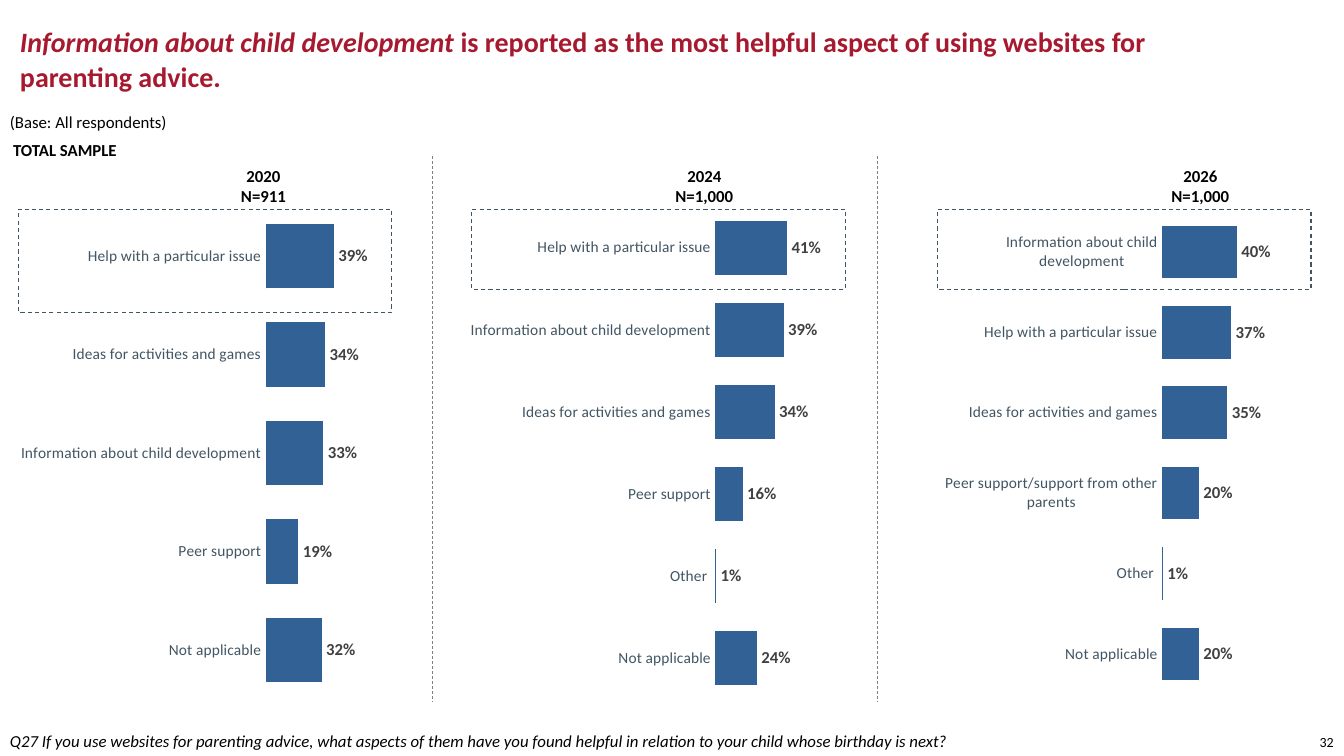
import pptx
import pptx.chart.data
import pptx.dml.color
import pptx.enum.chart
import pptx.enum.dml
import pptx.enum.shapes
import pptx.enum.text
import pptx.oxml
import pptx.util
from pptx.util import Cm

TITLE = [("Information about child development ", True),
         ("is reported as the most helpful aspect of using websites for parenting advice.", False)]
BASE = "(Base: All respondents)"
SAMPLE = "TOTAL SAMPLE"
QUESTION = ("Q27 If you use websites for parenting advice, what aspects of them have you found "
            "helpful in relation to your child whose birthday is next?")
PAGE = "32"

# left edges, header centre, highlight height and plot area (x, y, w, h as shares) per year
PANELS = [
    {"head": ["2020", "N=911"], "center": 6.64, "chart_left": 0.28,
     "box_left": 0.46, "box_height": 2.59, "plot": (0.573, 0.02, 0.4, 0.96),
     "answers": [("Help with a particular issue", 0.39), ("Ideas for activities and games", 0.34),
                 ("Information about child development", 0.33), ("Peer support", 0.19),
                 ("Not applicable", 0.32)]},
    {"head": ["2024", "N=1,000"], "center": 17.75, "chart_left": 11.61,
     "box_left": 11.89, "box_height": 2.01, "plot": (0.573, 0.02, 0.4, 0.96),
     "answers": [("Help with a particular issue", 0.41), ("Information about child development", 0.39),
                 ("Ideas for activities and games", 0.34), ("Peer support", 0.16),
                 ("Other ", 0.01), ("Not applicable", 0.24)]},
    {"head": ["2026", "N=1,000"], "center": 30.25, "chart_left": 23.27,
     "box_left": 23.62, "box_height": 2.01, "plot": (0.537, 0.03, 0.428, 0.94),
     "answers": [("Information about child development", 0.40), ("Help with a particular issue", 0.37),
                 ("Ideas for activities and games", 0.35),
                 ("Peer support/support from other parents", 0.20),
                 ("Other ", 0.01), ("Not applicable", 0.20)]},
]
DIVIDERS = [10.9, 22.12]
HEAD_WIDTH = 2

THEME = {
    "font": "Calibri",
    "title": {"size": 20, "color": "A6192E", "bold": True},
    "note": {"size": 12, "color": "000000"},
    "strong": {"size": 12, "color": "000000", "bold": True},
    "question": {"size": 12, "color": "000000", "italic": True},
    "page": {"size": 10, "color": "000000"},
    "axis": {"size": 11, "color": "425563"},
    "value": {"size": 12, "color": "404040", "bold": True},
    "chart": {"size": 18, "color": "000000"},
    "bar": "326295", "bar_line": "FFFFFF", "box_line": "425563", "divider": "808080",
}
ALIGN = pptx.enum.text.PP_ALIGN


def rgb(value):
    return pptx.dml.color.RGBColor.from_string(value)


def style_font(font, style, **extra):
    style = {**THEME[style], **extra}
    font.color.rgb = rgb(style.pop("color"))
    style.update(name=THEME["font"], size=pptx.util.Pt(style["size"]))
    for name, value in style.items():
        setattr(font, name, value)


def style_line(line, color, width, dashed=True):
    line.color.rgb = rgb(color)
    line.width = pptx.util.Pt(width)
    if dashed:
        line.dash_style = pptx.enum.dml.MSO_LINE.DASH


def add_text(s, lines, box, style, align=ALIGN.LEFT, wrap=False):
    tf = s.shapes.add_textbox(*map(Cm, box)).text_frame
    tf.word_wrap = wrap
    for i, line in enumerate(lines):
        p = tf.paragraphs[0] if i == 0 else tf.add_paragraph()
        p.alignment = align
        r = p.add_run()
        r.text = line
        style_font(r.font, style)
    return tf


def set_plot_area(chart, plot):
    """Fix the inner plot area to the given shares of the chart frame."""
    c = "http://schemas.openxmlformats.org/drawingml/2006/chart"
    area = chart.plots[0]._element.getparent()
    for old in area.findall("{%s}layout" % c):
        area.remove(old)
    modes = '<c:xMode val="edge"/><c:yMode val="edge"/>'
    sizes = "".join(f'<c:{k} val="{v}"/>' for k, v in zip("xywh", plot))
    area.insert(0, pptx.oxml.parse_xml(
        f'<c:layout xmlns:c="{c}"><c:manualLayout><c:layoutTarget val="inner"/>'
        f'{modes}{sizes}</c:manualLayout></c:layout>'))


def add_bars(s, panel):
    names, values = zip(*panel["answers"])
    data = pptx.chart.data.CategoryChartData(number_format="0%")
    data.categories = names
    data.add_series("Series 1", values)
    chart = s.shapes.add_chart(pptx.enum.chart.XL_CHART_TYPE.BAR_CLUSTERED,
                               Cm(panel["chart_left"]), Cm(4.95), Cm(11.18), Cm(12.93), data).chart
    chart.has_legend = chart.has_title = False
    style_font(chart.font, "chart")

    axis = chart.category_axis
    axis.reverse_order = True
    axis.major_tick_mark = axis.minor_tick_mark = pptx.enum.chart.XL_TICK_MARK.NONE
    axis.format.line.fill.background()
    style_font(axis.tick_labels.font, "axis")
    scale = chart.value_axis
    for name, value in {"minimum_scale": 0, "maximum_scale": 1,
                        "has_major_gridlines": False, "visible": False}.items():
        setattr(scale, name, value)

    plot = chart.plots[0]
    plot.gap_width = 50
    plot.vary_by_categories = False
    bars = plot.series[0].format
    bars.fill.solid()
    bars.fill.fore_color.rgb = rgb(THEME["bar"])
    style_line(bars.line, THEME["bar_line"], 0.75, dashed=False)
    plot.has_data_labels = True
    labels = plot.data_labels
    for name, value in {"show_value": True, "number_format": "0%", "number_format_is_linked": False,
                        "position": pptx.enum.chart.XL_LABEL_POSITION.OUTSIDE_END}.items():
        setattr(labels, name, value)
    style_font(labels.font, "value")
    set_plot_area(chart, panel["plot"])


def add_highlight(s, panel):
    sp = s.shapes.add_shape(pptx.enum.shapes.MSO_SHAPE.RECTANGLE, Cm(panel["box_left"]), Cm(5.28),
                            Cm(9.42), Cm(panel["box_height"]))
    sp.shadow.inherit = False
    sp.fill.background()
    style_line(sp.line, THEME["box_line"], 0.75)


def add_divider(s, x):
    line = s.shapes.add_connector(pptx.enum.shapes.MSO_CONNECTOR.STRAIGHT,
                                  Cm(x), Cm(3.94), Cm(x), Cm(17.7))
    style_line(line.line, THEME["divider"], 0.5)
    line._element.spPr.append(pptx.oxml.parse_xml(
        '<a:effectLst xmlns:a="http://schemas.openxmlformats.org/drawingml/2006/main"/>'))


def add_title(s):
    sp = s.shapes.title
    sp.left, sp.top, sp.width, sp.height = map(Cm, (0.25, 0.25, 29.21, 2.44))
    tf = sp.text_frame
    tf.auto_size = pptx.enum.text.MSO_AUTO_SIZE.NONE
    tf.vertical_anchor = pptx.enum.text.MSO_ANCHOR.MIDDLE
    p = tf.paragraphs[0]
    p.alignment = ALIGN.LEFT
    p.line_spacing = pptx.util.Pt(25)
    for text, italic in TITLE:
        r = p.add_run()
        r.text = text
        style_font(r.font, "title", italic=italic)


def main():
    prs = pptx.Presentation()
    prs.slide_width, prs.slide_height = Cm(33.87), Cm(19.05)
    s = prs.slides.add_slide(prs.slide_layouts.get_by_name("Title Only"))
    add_title(s)
    add_text(s, [BASE], (0, 2.69, 4.52, 0.76), "note")
    add_text(s, [SAMPLE], (0.08, 3.4, 3.15, 0.76), "strong")
    for panel in PANELS:
        add_bars(s, panel)
        head_left = panel["center"] - HEAD_WIDTH / 2
        add_text(s, panel["head"], (head_left, 4.04, HEAD_WIDTH, 1.27), "strong", ALIGN.CENTER)
        add_highlight(s, panel)
    for x in DIVIDERS:
        add_divider(s, x)
    add_text(s, [QUESTION], (0, 18.29, 26.77, 0.76), "question", wrap=True)
    page = add_text(s, [PAGE], (32.92, 18.36, 0.94, 0.69), "page", ALIGN.RIGHT)
    page.vertical_anchor = pptx.enum.text.MSO_ANCHOR.MIDDLE
    prs.save("out.pptx")


if __name__ == "__main__":
    main()
